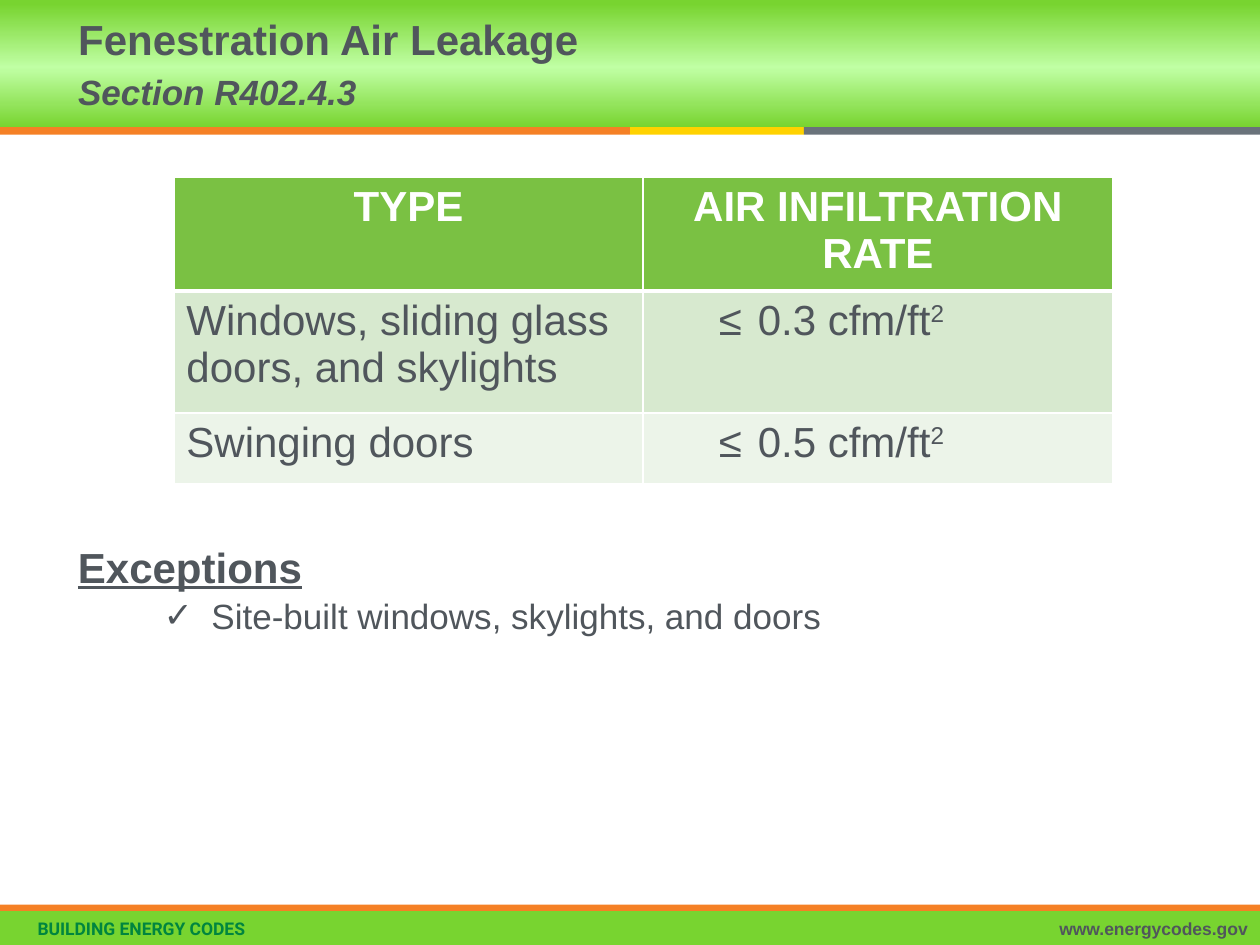
import pptx
import pptx.dml.color
import pptx.enum.shapes
import pptx.enum.text
import pptx.oxml
import pptx.oxml.ns
import pptx.util

Inches = pptx.util.Inches
Pt = pptx.util.Pt
ALIGN = pptx.enum.text.PP_ALIGN
MIDDLE = pptx.enum.text.MSO_ANCHOR.MIDDLE

COLORS = {
    "text": "50565C", "white": "FFFFFF", "green": "78D430", "glow": "C0FFA4",
    "orange": "F58025", "yellow": "FFD200", "gray": "6A737B",
    "brand": "00853F", "header": "7AC143", "band1": "D7E9CF", "band2": "ECF4E9",
}
NS = pptx.oxml.ns.nsdecls("a")


def rgb(name):
    return pptx.dml.color.RGBColor.from_string(COLORS[name])


def add_run(paragraph, text, color="text", size=24, **formats):
    run = paragraph.add_run()
    run.text = text
    run.font.color.rgb = rgb(color)
    settings = {"name": "Arial", "size": Pt(size), **formats}
    for attribute, value in settings.items():
        setattr(run.font, attribute, value)
    return run


def add_bullet(paragraph, symbol, margin, hanging):
    properties = paragraph._p.get_or_add_pPr()
    properties.set("marL", str(Inches(margin)))
    properties.set("indent", str(-Inches(hanging)))
    for xml in (f'<a:buFont {NS} typeface="Arial"/>',
                f'<a:buChar {NS} char="{symbol}"/>'):
        properties.append(pptx.oxml.parse_xml(xml))


def add_bar(slide, left, top, width, height, color):
    bar = slide.shapes.add_shape(
        pptx.enum.shapes.MSO_SHAPE.RECTANGLE,
        Inches(left), Inches(top), Inches(width), Inches(height))
    bar.shadow.inherit = False
    bar.line.fill.background()
    bar.fill.solid()
    bar.fill.fore_color.rgb = rgb(color)
    return bar


def add_glow(bar):
    """Fade the bar from green to a light middle and back."""
    bar.fill.gradient()
    bar.fill.gradient_angle = 90
    stops = bar._element.spPr.find(".//" + pptx.oxml.ns.qn("a:gsLst"))
    for stop in list(stops):
        stops.remove(stop)
    for percent, color in ((0, "green"), (47, "glow"), (97, "green")):
        stops.append(pptx.oxml.parse_xml(
            f'<a:gs {NS} pos="{percent * 1000}">'
            f'<a:srgbClr val="{COLORS[color]}"/></a:gs>'))


def add_text_frame(slide, left, top, width, height):
    box = slide.shapes.add_textbox(
        Inches(left), Inches(top), Inches(width), Inches(height))
    box.text_frame.word_wrap = True
    return box.text_frame


def add_footer_text(slide, left, width, text, align, **formats):
    frame = add_text_frame(slide, left, 7.24, width, 0.26)
    frame.margin_top = frame.margin_bottom = 0
    frame.vertical_anchor = MIDDLE
    frame.paragraphs[0].alignment = align
    add_run(frame.paragraphs[0], text, size=10, bold=True, **formats)


def add_title(slide):
    title = slide.shapes.title
    place = {"left": 0.52, "top": 0, "width": 5.87, "height": 1.01}
    for attribute, value in place.items():
        setattr(title, attribute, Inches(value))
    title.text_frame.vertical_anchor = MIDDLE
    heading = title.text_frame.paragraphs[0]
    heading.alignment = ALIGN.LEFT
    heading.line_spacing = Pt(28)
    add_run(heading, "Fenestration Air Leakage", bold=True)
    heading.add_line_break()
    add_run(heading, "Section R402.4.3", size=20, bold=True, italic=True)


def style_cell(cell, fill, bottom=1, top=1):
    cell.fill.solid()
    cell.fill.fore_color.rgb = rgb(fill)
    widths = {"lnL": 1, "lnR": 1, "lnT": top, "lnB": bottom}
    for position, (side, width) in enumerate(widths.items()):
        cell._tc.get_or_add_tcPr().insert(position, pptx.oxml.parse_xml(
            f'<a:{side} {NS} w="{Pt(width)}"><a:solidFill>'
            f'<a:srgbClr val="{COLORS["white"]}"/></a:solidFill></a:{side}>'))


def add_leakage_table(slide):
    heights = (0.9, 0.97, 0.56)
    table = slide.shapes.add_table(
        3, 2, Inches(1.38), Inches(1.41), Inches(7.45), Inches(sum(heights))).table
    for row, height in zip(table.rows, heights):
        row.height = Inches(height)

    # Header row
    for column, label in enumerate(("TYPE", "AIR INFILTRATION RATE")):
        cell = table.cell(0, column)
        style_cell(cell, "header", bottom=3)
        paragraph = cell.text_frame.paragraphs[0]
        paragraph.alignment = ALIGN.CENTER
        add_run(paragraph, label, "white", bold=True)

    # Limits for each type
    limits = (("Windows, sliding glass doors, and skylights", "0.3 cfm/ft", "band1"),
              ("Swinging doors", "0.5 cfm/ft", "band2"))
    for row, (kind, rate, band) in enumerate(limits, start=1):
        kind_cell, rate_cell = table.cell(row, 0), table.cell(row, 1)
        for cell in (kind_cell, rate_cell):
            style_cell(cell, band, top=3 if row == 1 else 1)
            cell.text_frame.paragraphs[0].font.bold = False
        add_run(kind_cell.text_frame.paragraphs[0], kind, bold=False)
        paragraph = rate_cell.text_frame.paragraphs[0]
        add_bullet(paragraph, "≤", 0.81, 0.31)
        add_run(paragraph, rate, bold=False)
        exponent = add_run(paragraph, "2", bold=False)
        exponent._r.get_or_add_rPr().set("baseline", "30000")


def add_exceptions(slide):
    frame = add_text_frame(slide, 0.52, 4.29, 8.98, 2.64)
    heading = frame.paragraphs[0]
    heading.line_spacing = 0.9
    add_run(heading, "Exceptions", bold=True, underline=True)
    item = frame.add_paragraph()
    item.line_spacing = 0.9
    item.space_before = Pt(4)
    add_bullet(item, "✓", 1.06, 0.38)
    add_run(item, "Site-built windows, skylights, and doors", size=20)


def main():
    deck = pptx.Presentation()
    deck.slide_width, deck.slide_height = Inches(10), Inches(7.5)
    slide = deck.slides.add_slide(deck.slide_layouts[5])

    # Header band and its stripe
    add_glow(add_bar(slide, 0, 0, 10, 1.01, "green"))
    left = 0
    for width, color in ((5, "orange"), (1.38, "yellow"), (3.62, "gray")):
        add_bar(slide, left, 1.01, width, 0.06, color)
        left += width

    # Footer
    add_bar(slide, 0, 7.23, 10, 0.27, "green")
    add_bar(slide, 0, 7.18, 10, 0.05, "orange")
    add_footer_text(slide, 0.2, 5, "BUILDING ENERGY CODES", ALIGN.LEFT,
                    color="brand", name="Roboto")
    add_footer_text(slide, 5.99, 4.01, "www.energycodes.gov", ALIGN.RIGHT)

    # Content; the title goes in front of the header band
    add_exceptions(slide)
    add_title(slide)
    slide.shapes._spTree.append(slide.shapes.title._element)
    add_leakage_table(slide)
    deck.save("out.pptx")


if __name__ == "__main__":
    main()
